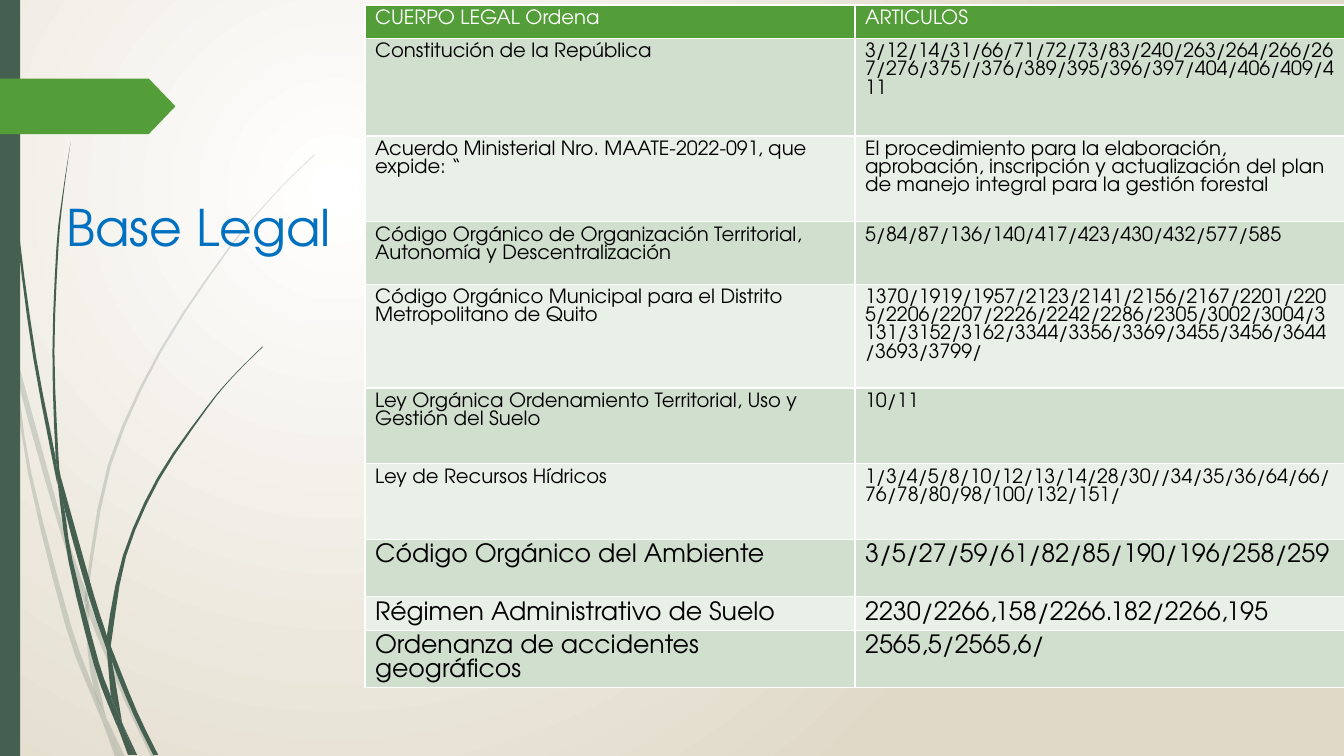
from lxml import etree
from pptx import Presentation
from pptx.dml.color import RGBColor
from pptx.enum import shapes, text
from pptx.oxml import ns
from pptx.util import Inches, Pt

FONT = "TeX Gyre Adventor"
HUES = {
    "pine": "455F51", "leaf": "549E39", "blue": "0070C0", "white": "FFFFFF",
    "sand": "E0D9C8", "black": "000000", "sage": "D1DFCE", "mist": "E9F0E8",
}
PALE = [
    ([(0, 2.99), (0.1, 3.44), (0.11, 3.5)], [(0, 2.82), (0.09, 3.22), (0.11, 3.5)]),
    ([(0.14, 3.45), (0.17, 3.76), (0.58, 5.22), (0.84, 5.99)],
     [(0.14, 3.45), (0.62, 5.2), (0.85, 5.86)]),
    ([(0.88, 5.96), (0.88, 6.1), (1.23, 6.94), (1.5, 7.51)],
     [(0.88, 5.96), (0.92, 6.07), (1.27, 6.92), (1.55, 7.51)]),
    ([(1.05, 7.11), (1.19, 7.51)], [(1.05, 7.11), (1.24, 7.51)]),
    ([(0.11, 3.5), (0.28, 4.7), (0.65, 6.21), (0.92, 6.93), (1.01, 7.14)],
     [(0.11, 3.5), (0.17, 3.76), (0.31, 4.69), (0.7, 6.19), (0.93, 6.83), (1.01, 7.14)]),
    ([(0.84, 5.99), (0.87, 6.46), (0.93, 6.83), (1.05, 7.11)],
     [(0.84, 5.99), (0.88, 6.1), (0.91, 6.46), (1.05, 7.11)]),
    ([(3.12, 1.53), (2.89, 1.75), (2.68, 1.97), (2.28, 2.44), (1.58, 3.48),
      (1.07, 4.61), (0.85, 5.84), (0.88, 5.96)],
     [(3.12, 1.54), (2.9, 1.75), (2.68, 1.98), (2.29, 2.45), (1.6, 3.49),
      (1.1, 4.62), (0.88, 5.84), (0.88, 5.96)]),
    ([(1.01, 7.14), (1.14, 7.51)], [(1.01, 7.14), (1.19, 7.51)]),
    ([(0.85, 5.86), (0.84, 5.99), (0.88, 6.1)], [(0.85, 5.86), (0.88, 5.96), (0.88, 6.1)]),
    ([(0.93, 6.83), (1.01, 7.14), (1.19, 7.51)], [(0.93, 6.83), (1.05, 7.11), (1.19, 7.51)]),
]
DARK = [
    ([(0.03, 0), (0.07, 1.1), (0.17, 2.33), (0.33, 3.55), (0.57, 4.81)],
     [(0.04, 0), (0.08, 1.09), (0.19, 2.32), (0.36, 3.55), (0.55, 4.53), (0.57, 4.81)]),
    ([(0.6, 4.72), (0.64, 5.05), (0.88, 5.92), (1.06, 6.45)],
     [(0.6, 4.72), (0.93, 5.9), (1.06, 6.31), (1.06, 6.45)]),
    ([(1.1, 6.41), (1.11, 6.56), (1.32, 7.08), (1.52, 7.49)],
     [(1.1, 6.41), (1.13, 6.49), (1.36, 7.06), (1.57, 7.49)]),
    ([(0.57, 4.77), (0.68, 5.57), (0.93, 6.59), (1.11, 7.08), (1.17, 7.22)],
     [(0.57, 4.77), (0.64, 5.05), (0.72, 5.56), (0.98, 6.57), (1.1, 6.91), (1.17, 7.22)]),
    ([(0.7, 1.41), (0.62, 1.93), (0.56, 2.45), (0.52, 3.49), (0.55, 4.49), (0.6, 4.72)],
     [(0.7, 1.41), (0.63, 1.93), (0.58, 2.45), (0.54, 3.49), (0.58, 4.53), (0.6, 4.72)]),
    ([(1.22, 7.19), (1.33, 7.49)], [(1.22, 7.19), (1.36, 7.49)]),
    ([(0.55, 4.49), (0.57, 4.77), (0.64, 5.05)], [(0.55, 4.49), (0.6, 4.72), (0.64, 5.05)]),
    ([(2.6, 3.44), (2.31, 3.73), (2.04, 4.05), (1.56, 4.74), (1.22, 5.51),
      (1.06, 6.31), (1.1, 6.41)],
     [(2.61, 3.44), (2.31, 3.74), (2.05, 4.06), (1.58, 4.76), (1.25, 5.52),
      (1.11, 6.33), (1.1, 6.41)]),
    ([(1.17, 7.22), (1.27, 7.49)], [(1.17, 7.22), (1.31, 7.49)]),
    ([(1.06, 6.45), (1.1, 6.91), (1.22, 7.19)],
     [(1.06, 6.45), (1.11, 6.56), (1.21, 7.16), (1.22, 7.19)]),
    ([(1.06, 6.31), (1.06, 6.45), (1.11, 6.56)], [(1.06, 6.31), (1.1, 6.41), (1.11, 6.56)]),
    ([(1.1, 6.91), (1.17, 7.22), (1.3, 7.49)], [(1.1, 6.91), (1.22, 7.19), (1.33, 7.49)]),
]
LAWS = [
    (0.33, 14, "CUERPO LEGAL Ordena", "ARTICULOS"),
    (0.97, 14, "Constitución de la República",
     "3/12/14/31/66/71/72/73/83/240/263/264/266/267/276/375//376/389/395/396/397"
     "/404/406/409/411"),
    (0.85, 14, "Acuerdo Ministerial Nro. MAATE-2022-091, que expide: “",
     "El procedimiento para la elaboración, aprobación, inscripción y actualización "
     "del plan de manejo integral para la gestión forestal"),
    (0.62, 14, "Código Orgánico de Organización Territorial, Autonomía y Descentralización",
     "5/84/87/136/140/417/423/430/432/577/585"),
    (1.03, 14, "Código Orgánico Municipal para el Distrito Metropolitano de Quito",
     "1370/1919/1957/2123/2141/2156/2167/2201/2205/2206/2207/2226/2242/2286/2305"
     "/3002/3004/3131/3152/3162/3344/3356/3369/3455/3456/3644/3693/3799/"),
    (0.75, 14, "Ley Orgánica Ordenamiento Territorial, Uso y Gestión del Suelo", "10/11"),
    (0.75, 14, "Ley de Recursos Hídricos",
     "1/3/4/5/8/10/12/13/14/28/30//34/35/36/64/66/76/78/80/98/100/132/151/"),
    (0.57, 18, "Código Orgánico del Ambiente", "3/5/27/59/61/82/85/190/196/258/259"),
    (0.33, 18, "Régimen Administrativo de Suelo", "2230/2266,158/2266.182/2266,195"),
    (0.57, 18, "Ordenanza de accidentes geográficos", "2565,5/2565,6/"),
]


def tint(name):
    return RGBColor.from_string(HUES[name])


def paint(shape, name):
    shape.shadow.inherit = False
    shape.fill.solid()
    shape.fill.fore_color.rgb = tint(name)
    shape.line.fill.background()


def style(par, size, name):
    par.font.name = FONT
    par.font.size = Pt(size)
    par.font.bold = False
    par.font.color.rgb = tint(name)


def smooth(knots):
    steps = 3 if len(knots) > 3 else 1
    ends = [knots[0], *knots, knots[-1]]
    out = [knots[0]]
    for a, b, c, d in zip(ends, ends[1:], ends[2:], ends[3:]):
        for i in range(1, steps + 1):
            t = i / steps
            out.append(tuple(
                q + t * (r - p) / 2 + t * t * (2 * p - 5 * q + 4 * r - s) / 2
                + t ** 3 * (3 * q - p - 3 * r + s) / 2
                for p, q, r, s in zip(a, b, c, d)))
    return out


def add_blade(slide, left, right, alpha=None):
    rim = [(Inches(x), Inches(y)) for x, y in smooth(left) + smooth(right)[::-1]]
    pen = slide.shapes.build_freeform(*rim[0])
    pen.add_line_segments(rim[1:], close=True)
    blade = pen.convert_to_shape()
    paint(blade, "pine")
    if alpha:
        color = blade._element.spPr.find(".//" + ns.qn("a:srgbClr"))
        etree.SubElement(color, ns.qn("a:alpha"), val=str(alpha * 1000))


def add_back(slide):
    fill = slide.background.fill
    fill.gradient()
    for stop, name in zip(fill.gradient_stops, ("white", "sand")):
        stop.color.rgb = tint(name)
    lin = slide._element.find(".//" + ns.qn("a:lin"))
    glow = etree.Element(ns.qn("a:path"), path="circle")
    etree.SubElement(glow, ns.qn("a:fillToRect"),
                     l="50000", t="50000", r="100000", b="100000")
    lin.getparent().replace(lin, glow)


def add_decor(slide, high):
    for left, right in PALE:
        add_blade(slide, left, right, 20)
    for left, right in DARK:
        add_blade(slide, left, right)
    bar = slide.shapes.add_shape(shapes.MSO_SHAPE.RECTANGLE, 0, 0, Inches(0.2), high)
    paint(bar, "pine")
    tag = slide.shapes.add_shape(shapes.MSO_SHAPE.PENTAGON, 0, Inches(0.78),
                                 Inches(1.74), Inches(0.55))
    tag.adjustments[0] = 0.48
    paint(tag, "leaf")


def add_title(slide, x, y, w, h):
    title = slide.shapes.title
    title.left, title.top, title.width, title.height = map(Inches, (x, y, w, h))
    frame = title.text_frame
    frame.text = "Base Legal"
    frame.vertical_anchor = text.MSO_ANCHOR.MIDDLE
    frame.margin_bottom = Inches(0.18)
    par = frame.paragraphs[0]
    par.alignment = text.PP_ALIGN.LEFT
    style(par, 36, "blue")


def add_laws(slide, x, y, w):
    high = sum(law[0] for law in LAWS)
    table = slide.shapes.add_table(len(LAWS), 2, *map(Inches, (x, y, w, high))).table
    for i, (tall, size, *words) in enumerate(LAWS):
        table.rows[i].height = Inches(tall)
        for cell, word in zip(table.rows[i].cells, words):
            cell.text = word
            cell.fill.solid()
            cell.fill.fore_color.rgb = tint(("mist", "sage")[i % 2] if i else "leaf")
            style(cell.text_frame.paragraphs[0], size, "black" if i else "white")


def main():
    deck = Presentation()
    deck.slide_width, deck.slide_height = Inches(13.33), Inches(7.5)
    slide = deck.slides.add_slide(deck.slide_layouts[5])
    add_back(slide)
    add_decor(slide, deck.slide_height)
    add_title(slide, 0.56, 1.9, 3.71, 0.82)
    add_laws(slide, 3.62, 0.05, 9.72)
    deck.save("out.pptx")


if __name__ == "__main__":
    main()
